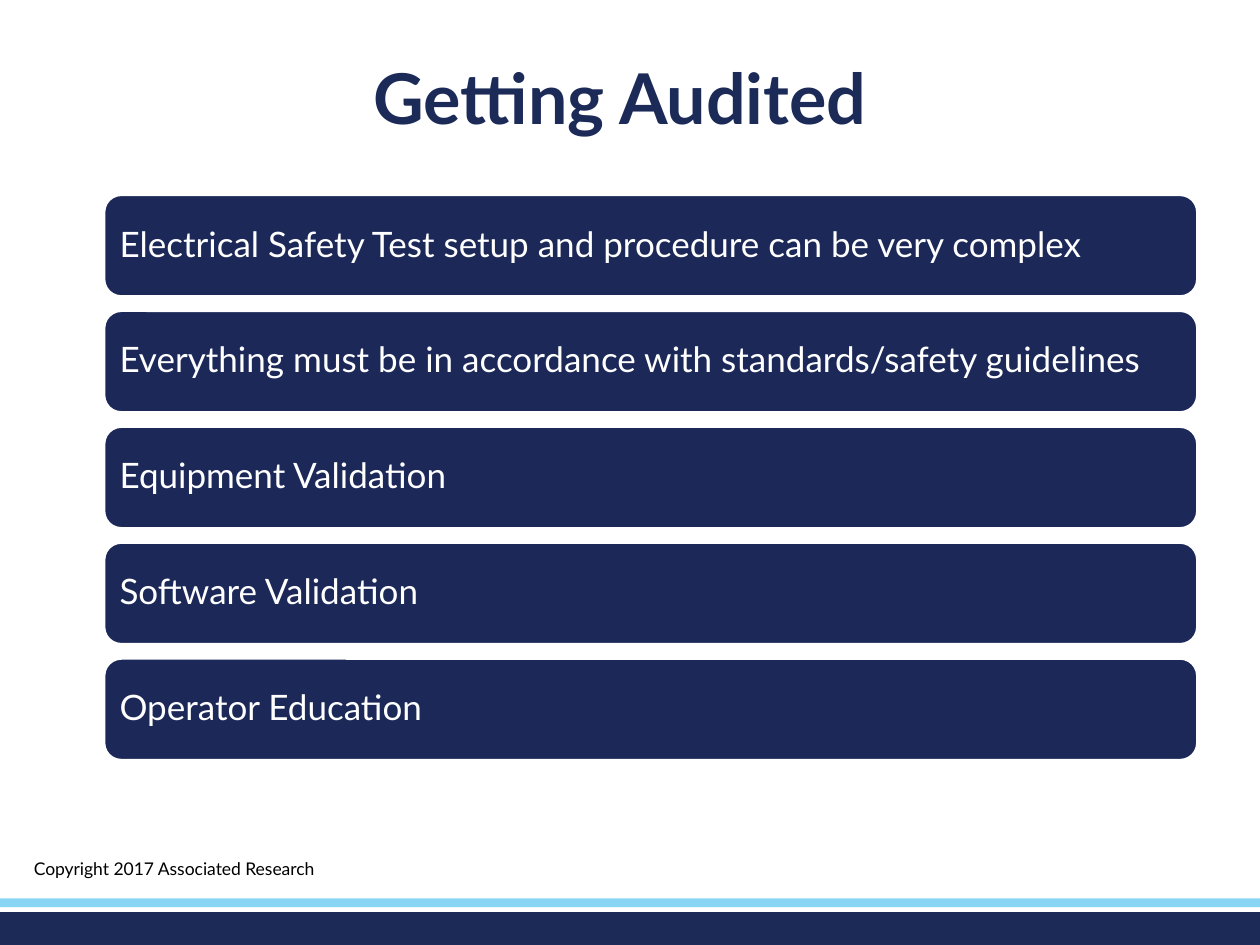
from pptx import Presentation
from pptx.dml.color import RGBColor
from pptx.enum.shapes import MSO_SHAPE as Shape
from pptx.enum.text import MSO_ANCHOR as Anchor, PP_ALIGN as Align
from pptx.util import Inches, Pt

NAVY = "1C2A58"
BAR_NAVY = "1C2958"
SKY = "88D6F4"
WHITE = "FFFFFF"


def color(hex_string):
    return RGBColor.from_string(hex_string)


def write(shape, text, size, ink, bold=False, align=Align.LEFT,
          anchor=Anchor.MIDDLE, spacing=0.9, inset=None):
    frame = shape.text_frame
    frame.word_wrap = True
    frame.vertical_anchor = anchor
    if inset is not None:
        frame.margin_left = frame.margin_right = Inches(inset)
        frame.margin_top = frame.margin_bottom = Inches(inset)
    paragraph = frame.paragraphs[0]
    paragraph.alignment = align
    paragraph.line_spacing = spacing
    run = paragraph.add_run()
    run.text = text
    run.font.name = "Lato"
    run.font.size = Pt(size)
    run.font.bold = bold
    run.font.color.rgb = color(ink)


presentation = Presentation()
presentation.slide_width = Inches(10)
presentation.slide_height = Inches(7.5)
slide = presentation.slides.add_slide(presentation.slide_layouts[5])

# Footer bands
for top, height, fill in [(7.24, 0.26, NAVY), (7.13, 0.07, SKY)]:
    band = slide.shapes.add_shape(
        Shape.RECTANGLE, 0, Inches(top), presentation.slide_width, Inches(height))
    band.shadow.inherit = False
    band.fill.solid()
    band.fill.fore_color.rgb = color(fill)
    band.line.fill.background()

# Title
title = slide.shapes.title
title.left, title.top = Inches(0.18), Inches(0.25)
title.width, title.height = Inches(9.48), Inches(1.12)
write(title, "Getting Audited", 40, NAVY, bold=True, align=Align.CENTER)

# Audit topics, one bar each
topics = [
    "Electrical Safety Test setup and procedure can be very complex",
    "Everything must be in accordance with standards/safety guidelines",
    "Equipment Validation",
    "Software Validation",
    "Operator Education",
]
for index, topic in enumerate(topics):
    bar = slide.shapes.add_shape(
        Shape.ROUNDED_RECTANGLE, Inches(0.83), Inches(1.55 + 0.92 * index),
        Inches(8.67), Inches(0.8))
    bar.shadow.inherit = False
    bar.fill.solid()
    bar.fill.fore_color.rgb = color(BAR_NAVY)
    bar.line.color.rgb = color(WHITE)
    bar.line.width = Pt(1)
    write(bar, topic, 20, WHITE, inset=0.08)

# Copyright line
copyright_box = slide.shapes.add_textbox(
    Inches(0.17), Inches(6.76), Inches(3.17), Inches(0.4))
write(copyright_box, "Copyright 2017 Associated Research", 10, "000000",
      anchor=Anchor.TOP, spacing=1.0)

presentation.save("out.pptx")
